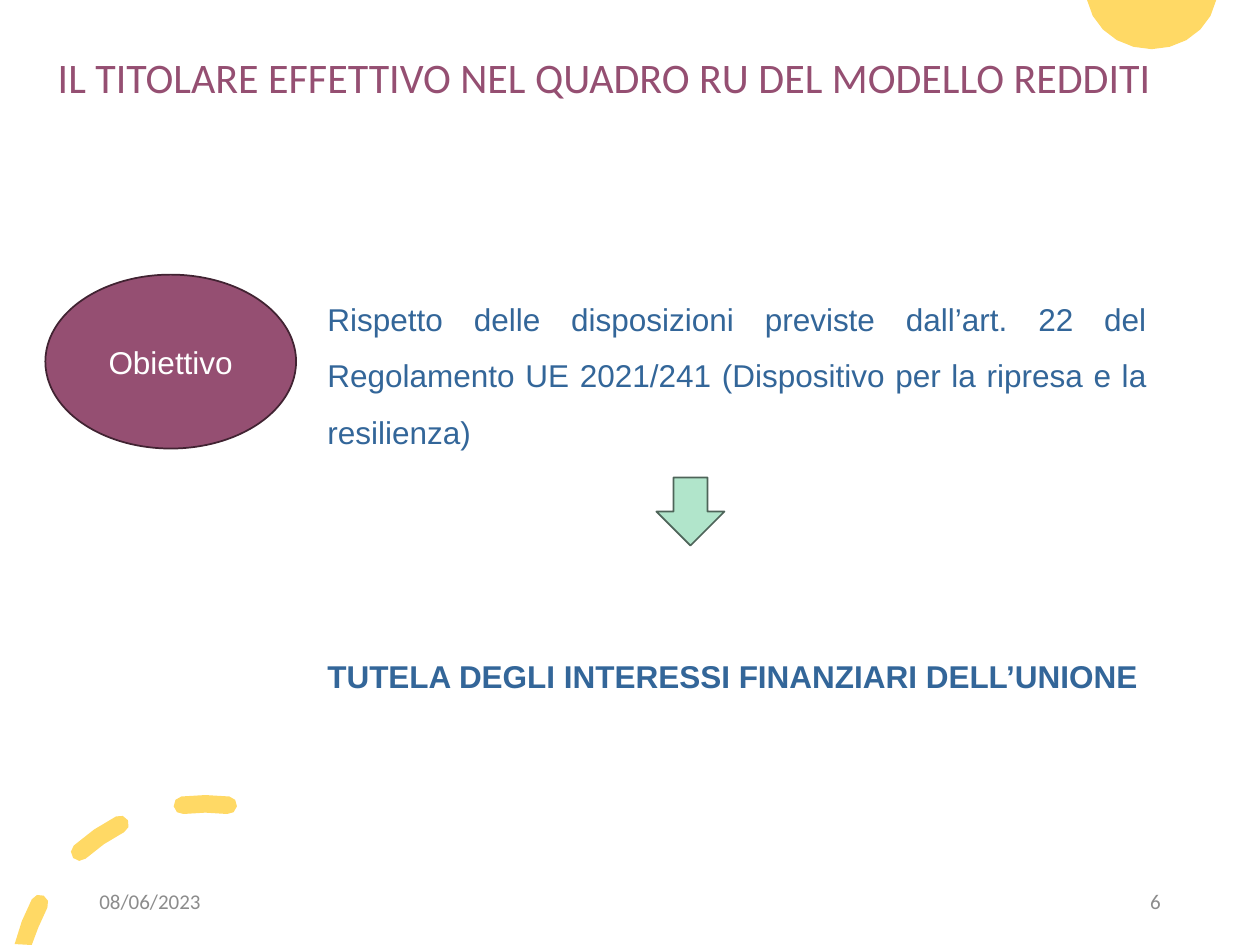
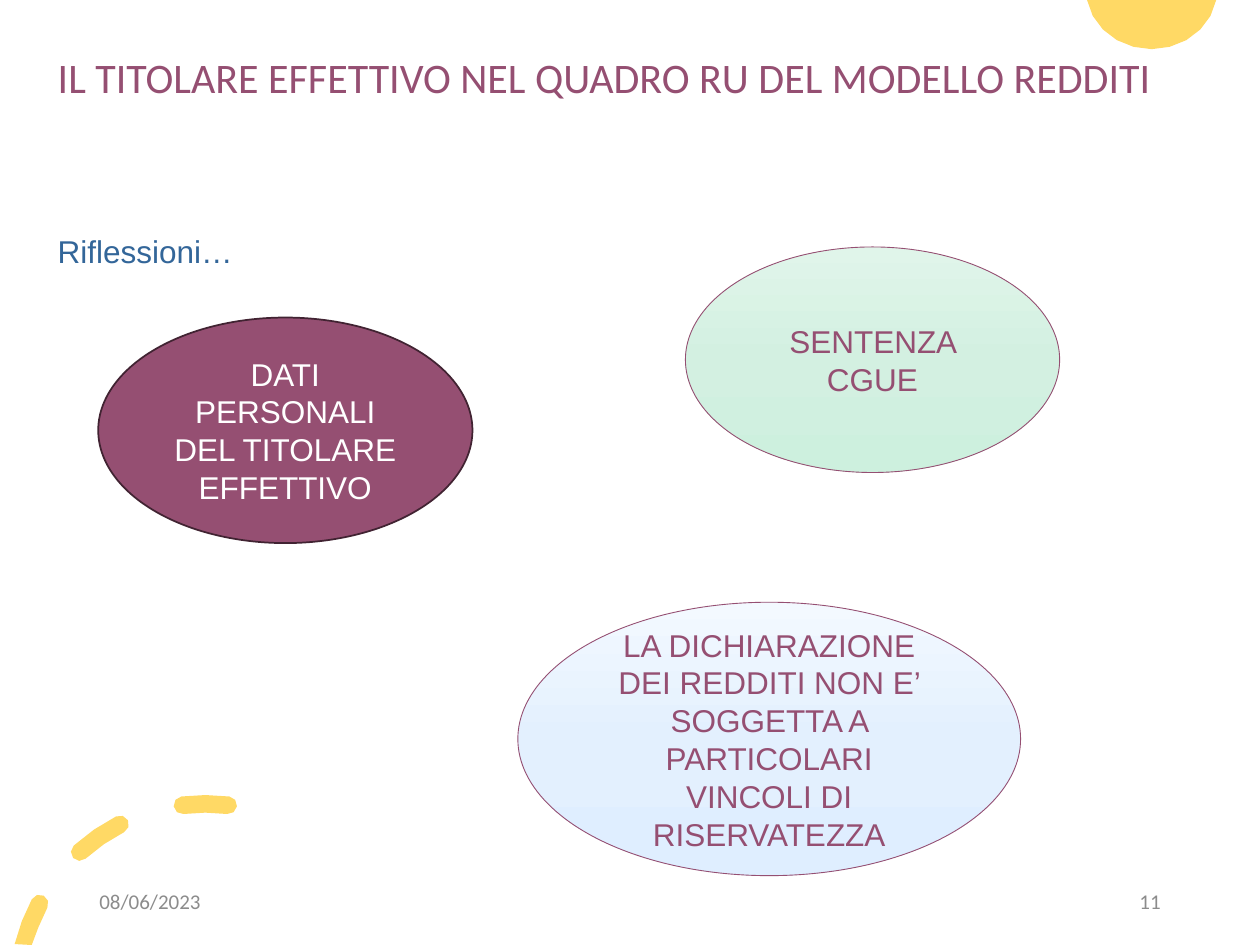
"""Build two slides on the beneficial owner in the RU section of the tax return."""
import copy
import math
from dataclasses import dataclass
from typing import Iterator, Optional

import pptx
import pptx.dml.color
import pptx.enum.shapes
import pptx.enum.text
import pptx.oxml.ns
import pptx.util

EMU_PER_PX = 9144
PAGE_WIDTH, PAGE_HEIGHT = 1000, 750
ALIGN = pptx.enum.text.PP_ALIGN
ANCHOR = pptx.enum.text.MSO_ANCHOR
PRESET = pptx.enum.shapes.MSO_SHAPE

COLORS = {
    "paper": "FFFFFF",
    "plum": "954F72",
    "plum_edge": "412332",
    "sun": "FFD965",
    "blue": "336699",
    "gray": "8C8C8C",
    "mint": "B1E5CB",
    "mint_edge": "4E6459",
}
GRADIENTS = {
    "mint": ("E0F5EA", "D3F0E1", "CDF0DE"),
    "sky": ("F3F9FF", "E3F0FE", "DFEEFF"),
}
TITLE = "IL TITOLARE EFFETTIVO NEL QUADRO RU DEL MODELLO REDDITI"
DATE = "08/06/2023"
ARC_CENTER = (163, 787)
ARC_RADIUS = 149
DASH_HALF_WIDTH = 7


@dataclass(frozen=True)
class Frame:
    left: int
    top: int
    width: int
    height: int

    def emu(self) -> tuple[int, int, int, int]:
        return px(self.left), px(self.top), px(self.width), px(self.height)


@dataclass(frozen=True)
class TextStyle:
    size: int
    font: str
    color: str
    align: ALIGN = ALIGN.LEFT
    spacing: float = 1.0
    before: int = 0
    after: int = 0
    bold: Optional[bool] = None


@dataclass(frozen=True)
class Bubble:
    frame: Frame
    text: str
    gradient: Optional[str] = None


@dataclass(frozen=True)
class Dash:
    start: int
    stop: int
    start_cap_steps: int = 4


TITLE_STYLE = TextStyle(24, "Calibri", "plum", spacing=0.9)
DATE_STYLE = TextStyle(12, "Calibri", "gray")
NUMBER_STYLE = TextStyle(12, "Calibri", "gray", ALIGN.RIGHT)
BODY_STYLE = TextStyle(18, "Arial", "blue", ALIGN.JUSTIFY, 1.5, 12, 2)
CLOSING_STYLE = TextStyle(18, "Arial", "blue", ALIGN.JUSTIFY, 1.5, 105, 2, True)

DASHES = (Dash(-76, -62, start_cap_steps=1), Dash(-42, -27), Dash(-7, 7))
GOAL = Bubble(Frame(36, 218, 199, 138), "Obiettivo")
REFLECTIONS = (
    Bubble(Frame(78, 252, 297, 179), "DATI PERSONALI DEL TITOLARE EFFETTIVO"),
    Bubble(Frame(544, 196, 297, 179), "SENTENZA CGUE", "mint"),
    Bubble(
        Frame(411, 478, 399, 217),
        "LA DICHIARAZIONE DEI REDDITI NON E’ SOGGETTA A PARTICOLARI VINCOLI DI RISERVATEZZA",
        "sky",
    ),
)


def px(length: float) -> int:
    return round(length * EMU_PER_PX)


def rgb(name: str) -> pptx.dml.color.RGBColor:
    return pptx.dml.color.RGBColor.from_string(COLORS[name])


def write(shape, items: list[tuple[str, TextStyle]], anchor: ANCHOR) -> None:
    frame = shape.text_frame
    frame.word_wrap = True
    frame.vertical_anchor = anchor
    for index, (text, style) in enumerate(items):
        para = frame.add_paragraph() if index else frame.paragraphs[0]
        para.text = text
        para.alignment = style.align
        para.line_spacing = style.spacing
        para.space_before = pptx.util.Pt(style.before)
        para.space_after = pptx.util.Pt(style.after)
        para.font.size = pptx.util.Pt(style.size)
        para.font.name = style.font
        para.font.bold = style.bold
        para.font.color.rgb = rgb(style.color)


def add_text(page, frame: Frame, items: list[tuple[str, TextStyle]],
             anchor: ANCHOR = ANCHOR.MIDDLE) -> None:
    write(page.shapes.add_textbox(*frame.emu()), items, anchor)


def add_preset(page, preset: PRESET, frame: Frame, fill: str, edge: str, weight: float):
    shape = page.shapes.add_shape(preset, *frame.emu())
    shape.shadow.inherit = False
    shape.fill.solid()
    shape.fill.fore_color.rgb = rgb(fill)
    shape.line.color.rgb = rgb(edge)
    shape.line.width = pptx.util.Pt(weight)
    return shape


def fill_gradient(shape, stops: tuple[str, str, str]) -> None:
    shape.fill.gradient()
    shape.fill.gradient_angle = 270
    stop_list = shape._element.spPr.find(".//" + pptx.oxml.ns.qn("a:gsLst"))
    stop_list.insert(1, copy.deepcopy(stop_list[0]))
    for index, (stop, color) in enumerate(zip(shape.fill.gradient_stops, stops)):
        stop.position = index / 2
        stop.color.rgb = pptx.dml.color.RGBColor.from_string(color)


def add_bubble(page, bubble: Bubble) -> None:
    edge, weight, ink = ("plum", 0.5, "plum") if bubble.gradient else ("plum_edge", 1, "paper")
    shape = add_preset(page, PRESET.OVAL, bubble.frame, "plum", edge, weight)
    if bubble.gradient:
        fill_gradient(shape, GRADIENTS[bubble.gradient])
    style = TextStyle(18, "Arial", ink, ALIGN.CENTER)
    write(shape, [(bubble.text, style)], ANCHOR.MIDDLE)


def arc(center: tuple[float, float], radius_x: float, radius_y: float,
        start: float, stop: float, steps: int) -> Iterator[tuple[float, float]]:
    for step in range(steps + 1):
        angle = math.radians(start + (stop - start) * step / steps)
        yield center[0] + radius_x * math.sin(angle), center[1] - radius_y * math.cos(angle)


def dash_outline(dash: Dash) -> list[tuple[float, float]]:
    cap = DASH_HALF_WIDTH
    outer, inner = ARC_RADIUS + cap, ARC_RADIUS - cap
    start, stop = dash.start, dash.stop
    first, last = arc(ARC_CENTER, ARC_RADIUS, ARC_RADIUS, start, stop, 1)
    sides = (
        arc(ARC_CENTER, outer, outer, start, stop, 2),
        arc(last, cap, cap, stop, stop + 180, 4),
        arc(ARC_CENTER, inner, inner, stop, start, 2),
        arc(first, cap, cap, start + 180, start + 360, dash.start_cap_steps),
    )
    return [point for side in sides for point in list(side)[:-1]]


def add_outlines(page, outlines: list[list[tuple[float, float]]]) -> None:
    contours = [
        [(px(x), px(min(max(y, 0), PAGE_HEIGHT))) for x, y in outline] for outline in outlines
    ]
    builder = page.shapes.build_freeform(*contours[0][0])
    for index, contour in enumerate(contours):
        if index:
            builder.move_to(*contour[0])
        builder.add_line_segments(contour[1:], close=True)
    shape = builder.convert_to_shape()
    shape.shadow.inherit = False
    shape.fill.solid()
    shape.fill.fore_color.rgb = rgb("sun")
    shape.line.fill.background()


def add_page(deck, number: int):
    page = deck.slides.add_slide(deck.slide_layouts[6])
    page.background.fill.solid()
    page.background.fill.fore_color.rgb = rgb("paper")
    add_outlines(page, [list(arc((914, -8), 52, 47, 100, 260, 10))])
    add_outlines(page, [dash_outline(dash) for dash in DASHES])
    add_text(page, Frame(36, 24, 895, 79), [(TITLE, TITLE_STYLE)])
    add_text(page, Frame(69, 695, 225, 40), [(DATE, DATE_STYLE)])
    add_text(page, Frame(706, 695, 225, 40), [(str(number), NUMBER_STYLE)])
    return page


def add_goal_page(deck) -> None:
    page = add_page(deck, 6)
    rule = ("Rispetto delle disposizioni previste dall’art. 22 del Regolamento UE 2021/241 "
            "(Dispositivo per la ripresa e la resilienza)")
    purpose = "TUTELA DEGLI INTERESSI FINANZIARI DELL’UNIONE"
    add_text(page, Frame(250, 218, 670, 470),
             [(rule, BODY_STYLE), (purpose, CLOSING_STYLE)], ANCHOR.TOP)
    add_bubble(page, GOAL)
    add_preset(page, PRESET.DOWN_ARROW, Frame(521, 379, 54, 54), "mint", "mint_edge", 1)


def add_reflections_page(deck) -> None:
    page = add_page(deck, 11)
    add_text(page, Frame(36, 164, 837, 470), [("Riflessioni…", BODY_STYLE)], ANCHOR.TOP)
    for bubble in REFLECTIONS:
        add_bubble(page, bubble)


def main() -> None:
    deck = pptx.Presentation()
    deck.slide_width, deck.slide_height = px(PAGE_WIDTH), px(PAGE_HEIGHT)
    add_goal_page(deck)
    add_reflections_page(deck)
    deck.save("out.pptx")


if __name__ == "__main__":
    main()
